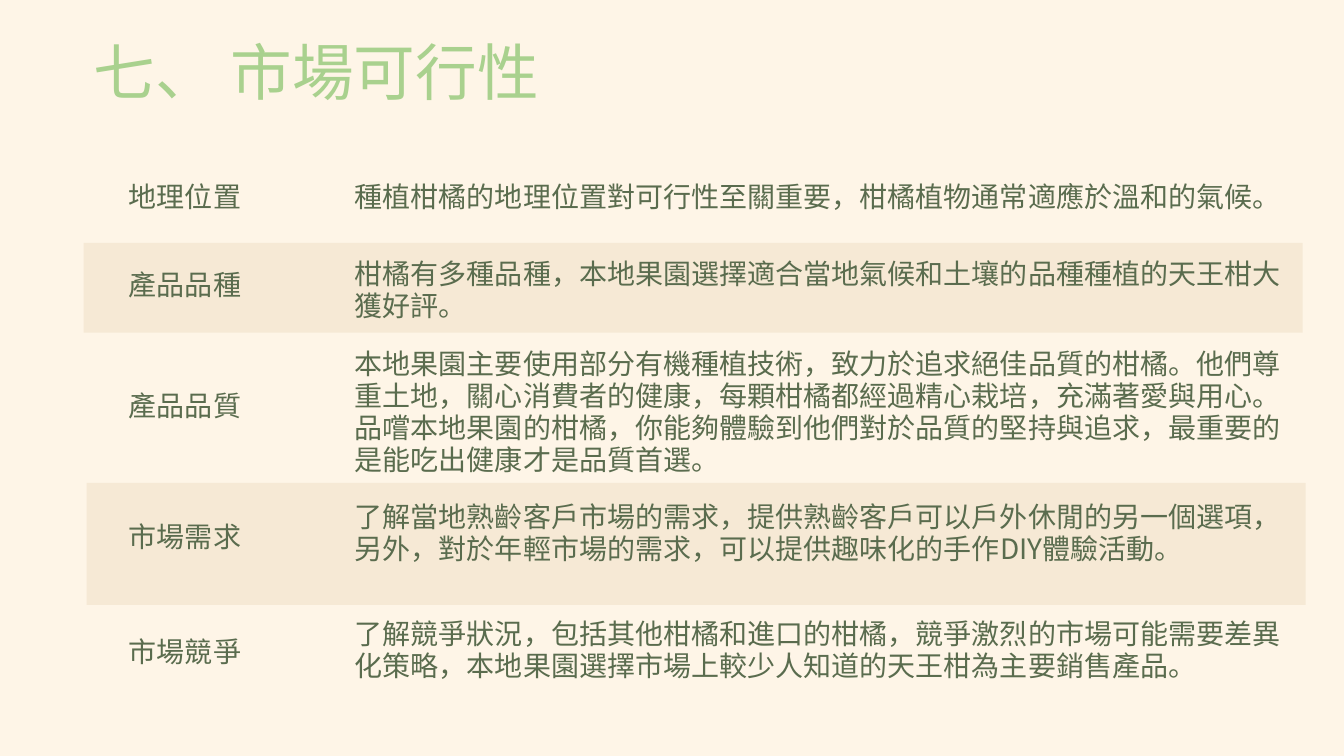
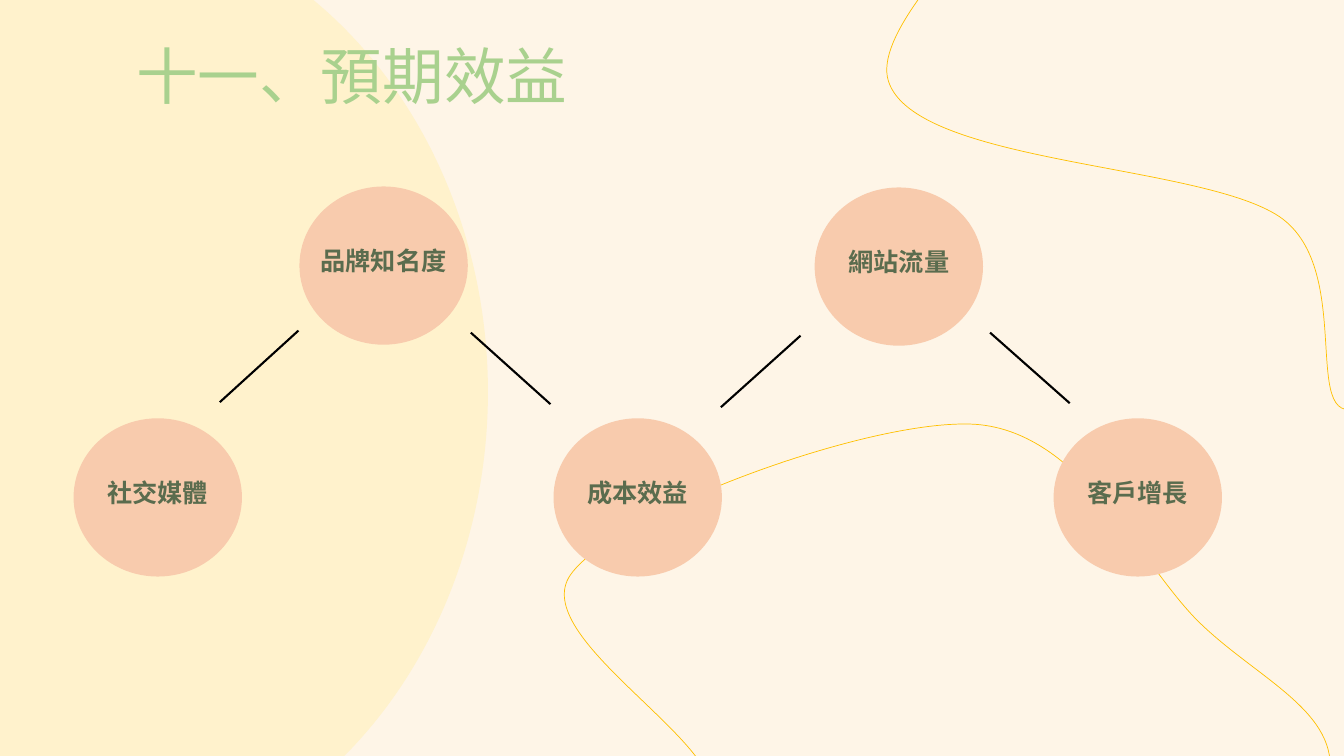
from lxml.etree import SubElement
from pptx import Presentation
from pptx.dml.color import RGBColor
from pptx.enum.shapes import MSO_CONNECTOR as Connector, MSO_SHAPE as Preset
from pptx.enum.text import MSO_ANCHOR as Anchor, MSO_AUTO_SIZE as AutoSize, PP_ALIGN as Align
from pptx.oxml.ns import qn
from pptx.util import Inches, Pt

CREAM, BAND, SUN, PEACH = "FEF5E7", "F6E9D5", "FFF2CC", "F8CBAD"
LEAF, MOSS, GOLD, BLACK = "A9D18E", "5A6C4E", "FFC000", "000000"
CJK = "Noto Sans CJK SC"
TITLE_STYLE = {"size": Pt(44), "name": CJK, "bold": False}
ROW_STYLE = {"size": Pt(20), "name": CJK}
BENEFIT_STYLE = {"size": Pt(18), "name": "Arial", "bold": True}

MARKET_TITLE = "七、 市場可行性"
MARKET_ROWS = [
    {"label": ("地理位置", 1.75), "detail_top": 1.75, "detail_height": 0.64,
     "detail": "種植柑橘的地理位置對可行性至關重要，柑橘植物通常適應於溫和的氣候。"},
    {"label": ("產品品種", 2.62), "detail_top": 2.51, "detail_height": 0.64,
     "band": (0.83, 2.41, 12.09, 0.89),
     "detail": "柑橘有多種品種，本地果園選擇適合當地氣候和土壤的品種種植的天王柑大獲好評。"},
    {"label": ("產品品質", 3.82), "detail_top": 3.4, "detail_height": 1.27,
     "detail": "本地果園主要使用部分有機種植技術，致力於追求絕佳品質的柑橘。"
               "他們尊重土地，關心消費者的健康，每顆柑橘都經過精心栽培，充滿著愛與用心。"
               "品嚐本地果園的柑橘，你能夠體驗到他們對於品質的堅持與追求，"
               "最重要的是能吃出健康才是品質首選。"},
    {"label": ("市場需求", 5.12), "detail_top": 4.92, "detail_height": 0.95,
     "band": (0.86, 4.79, 12.09, 1.21),
     "detail": "了解當地熟齡客戶市場的需求，提供熟齡客戶可以戶外休閒的另一個選項，"
               "另外，對於年輕市場的需求，可以提供趣味化的手作DIY體驗活動。"},
    {"label": ("市場競爭", 6.26), "detail_top": 6.08, "detail_height": 0.95,
     "detail": "了解競爭狀況，包括其他柑橘和進口的柑橘，競爭激烈的市場可能需要差異化策略，"
               "本地果園選擇市場上較少人知道的天王柑為主要銷售產品。"},
]
LABEL_LEFT, LABEL_WIDTH, LABEL_HEIGHT = 1.18, 2.82, 0.32
DETAIL_LEFT, DETAIL_WIDTH = 3.42, 9.59

BENEFIT_TITLE = "十一、預期效益"
BENEFITS = [("社交媒體", 0.73, 4.15), ("品牌知名度", 2.97, 1.85), ("成本效益", 5.49, 4.15),
            ("網站流量", 8.08, 1.86), ("客戶增長", 10.45, 4.15)]
CIRCLE_WIDTH, CIRCLE_HEIGHT = 1.67, 1.57
LINKS = [(2.18, 3.99, 2.96, 3.28), (4.67, 3.3, 5.46, 4.01),
         (7.15, 4.04, 7.94, 3.33), (9.82, 3.3, 10.61, 4)]
SUN_BOX = (-3.52, -0.91, 8.36, 9.6)
VINES = [
    [(11.19, -2.84), (11.55, -2.22), (8.56, -0.03), (8.81, 0.8), (9.06, 1.63),
     (11.9, 1.62), (12.69, 2.15), (13.48, 2.69), (12.84, 4.39), (13.55, 4.01)],
    [(7.05, 7.93), (7.23, 7.38), (5.22, 6.32), (5.66, 5.7), (6.1, 5.08),
     (8.65, 4.14), (9.68, 4.21), (10.72, 4.29), (11.29, 5.56), (11.87, 6.15),
     (12.45, 6.73), (13.31, 7.06), (13.18, 7.73)],
]


def rgb(color):
    return RGBColor.from_string(color)


def inches(box):
    return [Inches(length) for length in box]


def write(frame, text, style, color, align=Align.LEFT, spacing=1.0):
    frame.word_wrap = True
    frame.auto_size = AutoSize.NONE
    paragraph = frame.paragraphs[0]
    paragraph.alignment = align
    paragraph.line_spacing = spacing
    run = paragraph.add_run()
    run.text = text
    for key, value in style.items():
        setattr(run.font, key, value)
    run.font.color.rgb = rgb(color)
    SubElement(run.font._element, qn("a:ea"), typeface=CJK)


def add_titled_slide(deck, text, box):
    slide = deck.slides.add_slide(deck.slide_layouts[5])
    title = slide.shapes.title
    title.left, title.top, title.width, title.height = inches(box)
    title.text_frame.vertical_anchor = Anchor.MIDDLE
    write(title.text_frame, text, TITLE_STYLE, LEAF, spacing=0.9)
    return slide


def add_filled(slide, preset, box, color):
    shape = slide.shapes.add_shape(preset, *inches(box))
    shape.shadow.inherit = False
    shape.fill.solid()
    shape.fill.fore_color.rgb = rgb(color)
    shape.line.fill.background()
    return shape


def add_row_text(slide, text, box):
    frame = slide.shapes.add_textbox(*inches(box)).text_frame
    write(frame, text, ROW_STYLE, MOSS, spacing=Pt(22.9))


def add_vine(slide, points):
    start, *rest = [inches(point) for point in points]
    builder = slide.shapes.build_freeform(*start)
    builder.add_line_segments(rest, close=False)
    vine = builder.convert_to_shape()
    vine.shadow.inherit = False
    vine.fill.background()
    vine.line.color.rgb = rgb(GOLD)
    vine.line.width = Pt(0.5)
    outline = next(vine.element.iter(qn("a:path")))
    steps = outline.findall(qn("a:lnTo"))
    for first in range(0, len(steps), 3):
        curve = SubElement(outline, qn("a:cubicBezTo"))
        for step in steps[first:first + 3]:
            curve.append(step[0])
            outline.remove(step)


def add_link(slide, ends):
    link = slide.shapes.add_connector(Connector.STRAIGHT, *inches(ends))
    link.line.color.rgb = rgb(BLACK)
    link.line.width = Pt(1.5)
    SubElement(link.element.spPr, qn("a:effectLst"))


def build_market(deck):
    slide = add_titled_slide(deck, MARKET_TITLE, (0.83, 0.32, 5.13, 0.86))
    for row in MARKET_ROWS:
        if "band" in row:
            add_filled(slide, Preset.RECTANGLE, row["band"], BAND)
        label, label_top = row["label"]
        add_row_text(slide, label, (LABEL_LEFT, label_top, LABEL_WIDTH, LABEL_HEIGHT))
        add_row_text(slide, row["detail"],
                     (DETAIL_LEFT, row["detail_top"], DETAIL_WIDTH, row["detail_height"]))


def build_benefits(deck):
    slide = add_titled_slide(deck, BENEFIT_TITLE, (1.25, 0.36, 5.13, 0.86))
    sun = add_filled(slide, Preset.OVAL, SUN_BOX, SUN)
    slide.shapes.element.insert(2, sun.element)
    for points in VINES:
        add_vine(slide, points)
    for ends in LINKS:
        add_link(slide, ends)
    for benefit, left, top in BENEFITS:
        circle = add_filled(slide, Preset.OVAL, (left, top, CIRCLE_WIDTH, CIRCLE_HEIGHT), PEACH)
        frame = circle.text_frame
        frame.margin_left = frame.margin_right = frame.margin_top = 0
        frame.margin_bottom = Inches(0.1)
        frame.vertical_anchor = Anchor.MIDDLE
        write(frame, benefit, BENEFIT_STYLE, MOSS, Align.CENTER)
        frame.word_wrap = False


def main():
    """Build the market feasibility and expected benefits slides."""
    deck = Presentation()
    deck.slide_width, deck.slide_height = Inches(13.33), Inches(7.5)
    backdrop = deck.slide_master.background.fill
    backdrop.solid()
    backdrop.fore_color.rgb = rgb(CREAM)
    build_market(deck)
    build_benefits(deck)
    deck.save("out.pptx")


if __name__ == "__main__":
    main()
